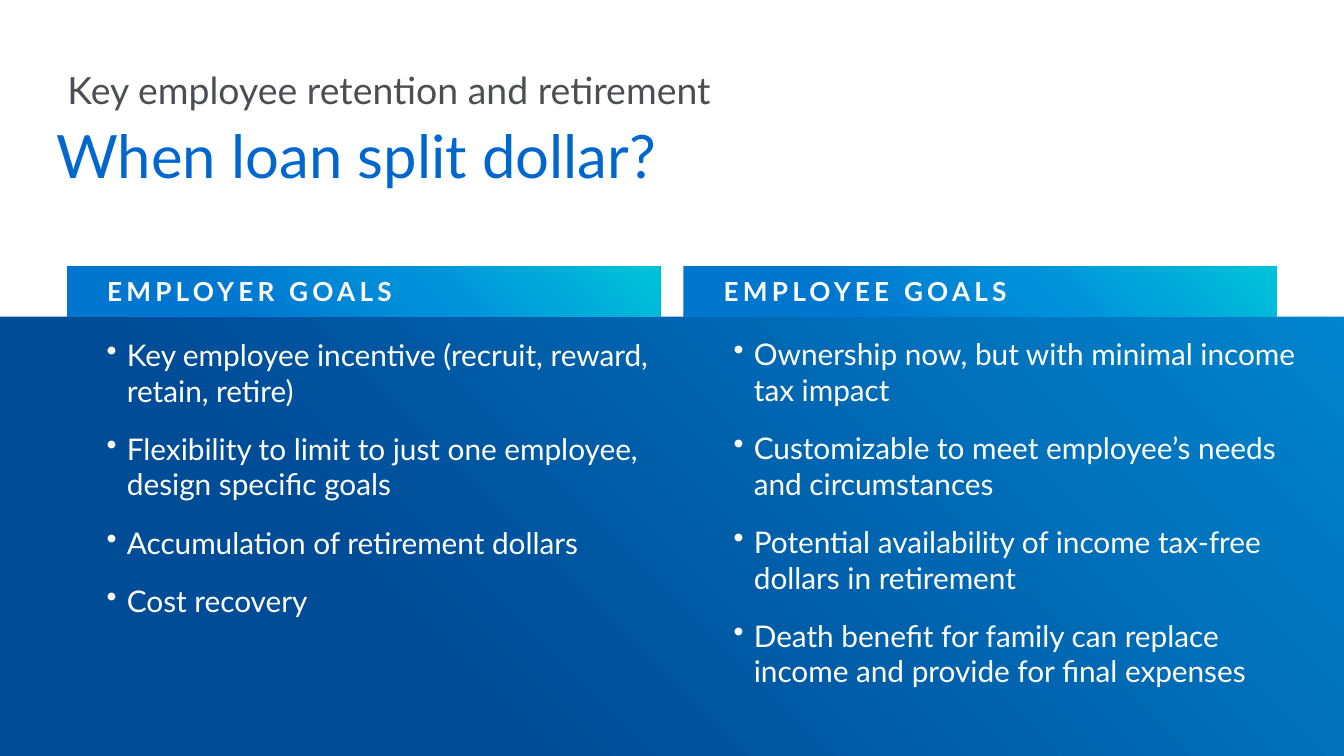
from lxml import etree
from pptx import Presentation
from pptx.dml.color import RGBColor
from pptx.enum import shapes, text
from pptx.oxml import ns
from pptx.util import Cm, Pt

WHITE = RGBColor(0xFF, 0xFF, 0xFF)
GRAY = RGBColor(0x4D, 0x4E, 0x53)
TITLE_BLUE = RGBColor(0x00, 0x67, 0xCF)
NAVY = RGBColor(0x00, 0x4C, 0x97)
BLUE = RGBColor(0x00, 0x76, 0xCF)
SKY = RGBColor(0x00, 0x91, 0xDA)
TEAL = RGBColor(0x00, 0xC3, 0xD9)

FONT = "Lato"
SLIDE_WIDTH, SLIDE_HEIGHT = Cm(33.87), Cm(19.05)
BODY_TOP = Cm(7.98)
BANNER_WIDTH, BANNER_HEIGHT = Cm(14.96), Cm(1.27)
BULLET_INDENT = Cm(0.51)

BODY_STOPS = [(25, NAVY), (99, SKY)]
BANNER_STOPS = [(25, BLUE), (60, SKY), (100, TEAL)]

# heading, banner left, list left, list top, list width, goals
COLUMNS = [
    ("EMPLOYER GOALS", Cm(1.68), Cm(2.69), Cm(8.48), Cm(13.94), [
        "Key employee incentive (recruit, reward, retain, retire)",
        "Flexibility to limit to just one employee, design specific goals",
        "Accumulation of retirement dollars",
        "Cost recovery",
    ]),
    ("EMPLOYEE GOALS", Cm(17.22), Cm(18.49), Cm(8.46), Cm(14.55), [
        "Ownership now, but with minimal income tax impact",
        "Customizable to meet employee’s needs and circumstances",
        "Potential availability of income tax-free dollars in retirement",
        "Death benefit for family can replace income and provide for final expenses",
    ]),
]


def add_bullet(paragraph):
    properties = paragraph._p.get_or_add_pPr()
    properties.set("marL", str(BULLET_INDENT))
    properties.set("indent", str(-BULLET_INDENT))
    etree.SubElement(properties, ns.qn("a:buChar"), char="•")


def write_text(frame, lines, size, color, bold=False, spacing=0, bullets=False,
               space_before=0, margins=(0, 0, 0, 0), anchor=text.MSO_ANCHOR.TOP):
    """Fill a text frame with one paragraph per line; margins are left, top, right, bottom."""
    frame.word_wrap = True
    frame.vertical_anchor = anchor
    (frame.margin_left, frame.margin_top,
     frame.margin_right, frame.margin_bottom) = margins
    for index, line in enumerate(lines):
        paragraph = frame.add_paragraph() if index else frame.paragraphs[0]
        paragraph.alignment = text.PP_ALIGN.LEFT
        if index:
            paragraph.space_before = Pt(space_before)
        if bullets:
            add_bullet(paragraph)
        run = paragraph.add_run()
        run.text = line
        run.font.name = FONT
        run.font.size = Pt(size)
        run.font.bold = bold
        run.font.color.rgb = color
        if spacing:
            run.font._element.set("spc", str(spacing * 100))


def add_text(slide, left, top, width, height, lines, **text_format):
    box = slide.shapes.add_textbox(left, top, width, height)
    write_text(box.text_frame, lines, **text_format)


def add_rectangle(slide, left, top, width, height):
    shape = slide.shapes.add_shape(shapes.MSO_SHAPE.RECTANGLE, left, top, width, height)
    shape.shadow.inherit = False
    shape.line.fill.background()
    return shape


def fill_gradient(shape, stops):
    """Blend the (percent, colour) stops from bottom left to top right."""
    shape.fill.gradient()
    shape.fill.gradient_angle = 45
    stop_list = shape._element.spPr.find(ns.qn("a:gradFill")).find(ns.qn("a:gsLst"))
    for old_stop in list(stop_list):
        stop_list.remove(old_stop)
    for percent, color in stops:
        stop = etree.SubElement(stop_list, ns.qn("a:gs"), pos=str(percent * 1000))
        etree.SubElement(stop, ns.qn("a:srgbClr"), val=str(color))


def add_background(slide):
    body = add_rectangle(slide, 0, 0, SLIDE_WIDTH, SLIDE_HEIGHT)
    fill_gradient(body, BODY_STOPS)
    header = add_rectangle(slide, 0, 0, SLIDE_WIDTH, BODY_TOP)
    header.fill.solid()
    header.fill.fore_color.rgb = WHITE


def add_column(slide, heading, banner_left, list_left, list_top, list_width, goals):
    banner = add_rectangle(slide, banner_left, BODY_TOP - BANNER_HEIGHT,
                           BANNER_WIDTH, BANNER_HEIGHT)
    fill_gradient(banner, BANNER_STOPS)
    write_text(banner.text_frame, [heading], size=18.7, color=WHITE, bold=True, spacing=3,
               margins=(Cm(1.02), Cm(0.18), Cm(0.33), Cm(0.18)),
               anchor=text.MSO_ANCHOR.MIDDLE)
    add_text(slide, list_left, list_top, list_width, Cm(6.93), goals,
             size=21.3, color=WHITE, bullets=True, space_before=16)


def main():
    presentation = Presentation()
    presentation.slide_width, presentation.slide_height = SLIDE_WIDTH, SLIDE_HEIGHT
    slide = presentation.slides.add_slide(presentation.slide_layouts[6])

    add_background(slide)
    add_text(slide, Cm(1.7), Cm(1.68), Cm(30.48), Cm(1.22),
             ["Key employee retention and retirement"], size=26.7, color=GRAY)
    add_text(slide, Cm(1.42), Cm(3), Cm(30.48), Cm(3),
             ["When loan split dollar?"], size=42.7, color=TITLE_BLUE)
    for column in COLUMNS:
        add_column(slide, *column)

    presentation.save("out.pptx")


if __name__ == "__main__":
    main()
